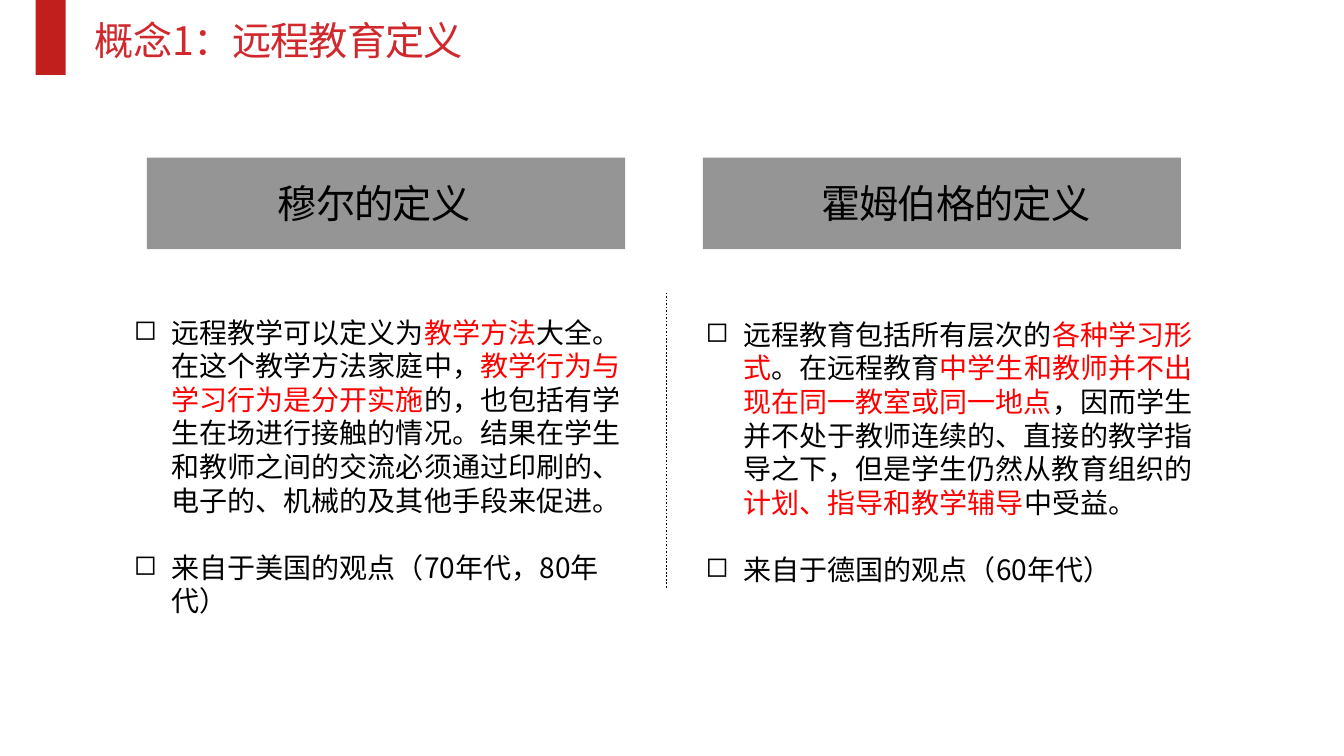
from lxml import etree
from pptx import Presentation
from pptx import util as u
from pptx.dml import color as col
from pptx.enum import dml, shapes, text
from pptx.oxml import ns

Pt = u.Pt
FONT = "Noto Sans CJK SC"
HUE = {"bar": "C11E1E", "title": "D1282E", "head": "959595",
       "ink": "000000", "key": "FF0000"}

deck = Presentation()
deck.slide_width, deck.slide_height = Pt(960), Pt(540)
slide = deck.slides.add_slide(deck.slide_layouts[5])
parts = slide.shapes


def style(run, size, hue):
    run.font.size = Pt(size)
    run.font.name = FONT
    run.font.color.rgb = col.RGBColor.from_string(HUE[hue])
    props = run._r.get_or_add_rPr()
    etree.SubElement(props, ns.qn("a:ea")).set("typeface", FONT)
    if size == 28:
        props.set("spc", "-60")


def block(left, top, wide, high, hue):
    rect = parts.add_shape(shapes.MSO_SHAPE.RECTANGLE,
                           Pt(left), Pt(top), Pt(wide), Pt(high))
    rect.shadow.inherit = False
    rect.fill.solid()
    rect.fill.fore_color.rgb = col.RGBColor.from_string(HUE[hue])
    rect.line.fill.background()


# Red bar and title
block(25.5, 0, 21.5, 53.5, "bar")
title = parts.title
title.left, title.top, title.width, title.height = Pt(60.5), Pt(8.5), Pt(279.5), Pt(41)
frame = title.text_frame
frame.text = "概念1：远程教育定义"
frame.word_wrap = True
frame.auto_size = text.MSO_AUTO_SIZE.NONE
frame.vertical_anchor = text.MSO_ANCHOR.TOP
line = frame.paragraphs[0]
line.alignment = text.PP_ALIGN.LEFT
line.line_spacing = Pt(33.5)
style(line.runs[0], 28, "title")

# Two columns: block left, heading box, body box, then runs with their colours
columns = [
    (105, "穆尔的定义", (191.5, 152.5), (88.5, 221.5, 375), [
        [("远程教学可以定义为", "ink"), ("教学方法", "key"),
         ("大全。在这个教学方法家庭中，", "ink"),
         ("教学行为与学习行为是分开实施", "key"),
         ("的，也包括有学生在场进行接触的情况。结果在学生和教师之间的交流"
          "必须通过印刷的、电子的、机械的及其他手段来促进。", "ink")],
        [("来自于美国的观点（70年代，80年代）", "ink")]]),
    (502, "霍姆伯格的定义", (579.5, 216), (497, 223, 366), [
        [("远程教育包括所有层次的", "ink"), ("各种学习形式", "key"),
         ("。在远程教育", "ink"),
         ("中学生和教师并不出现在同一教室或同一地点", "key"),
         ("，因而学生并不处于教师连续的、直接的教学指导之下，"
          "但是学生仍然从教育组织的", "ink"),
         ("计划、指导和教学辅导", "key"), ("中受益。", "ink")],
        [("来自于德国的观点（60年代）", "ink")]]),
]
for left, name, (start, wide), (side, top, span), points in columns:
    block(left, 112.5, 341.5, 65.5, "head")
    head = parts.add_textbox(Pt(start), Pt(124.5), Pt(wide), Pt(41))
    head.text_frame.text = name
    head.text_frame.word_wrap = False
    line = head.text_frame.paragraphs[0]
    line.line_spacing = Pt(33.5)
    style(line.runs[0], 28, "ink")

    body = parts.add_textbox(Pt(side), Pt(top), Pt(span), Pt(201))
    frame = body.text_frame
    frame.word_wrap = True
    for rank, pieces in enumerate(points):
        para = frame.paragraphs[0] if rank == 0 else frame.add_paragraph()
        props = para._p.get_or_add_pPr()
        props.set("marL", str(Pt(27)))
        props.set("indent", str(Pt(-27)))
        etree.SubElement(props, ns.qn("a:buChar")).set("char", "◻")
        para.line_spacing = Pt(24)
        if rank:
            para.space_before = Pt(24)
        for words, hue in pieces:
            run = para.add_run()
            run.text = words
            style(run, 20, hue)

# Dotted divider
rule = parts.add_connector(shapes.MSO_CONNECTOR.STRAIGHT,
                           Pt(476), Pt(209), Pt(476), Pt(420.5))
rule.line.color.rgb = col.RGBColor.from_string(HUE["ink"])
rule.line.width = Pt(1.25)
rule.line.dash_style = dml.MSO_LINE.ROUND_DOT
etree.SubElement(rule._element.spPr, ns.qn("a:effectLst"))

deck.save("out.pptx")
